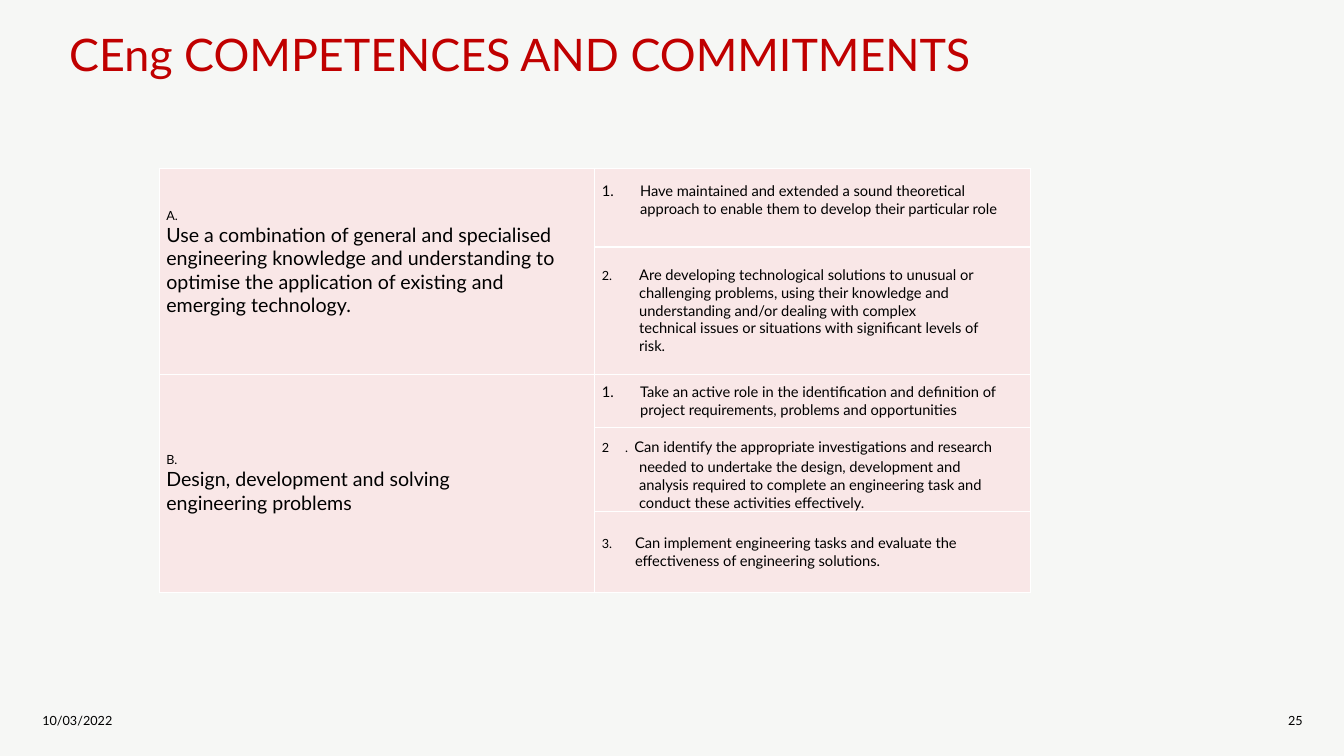
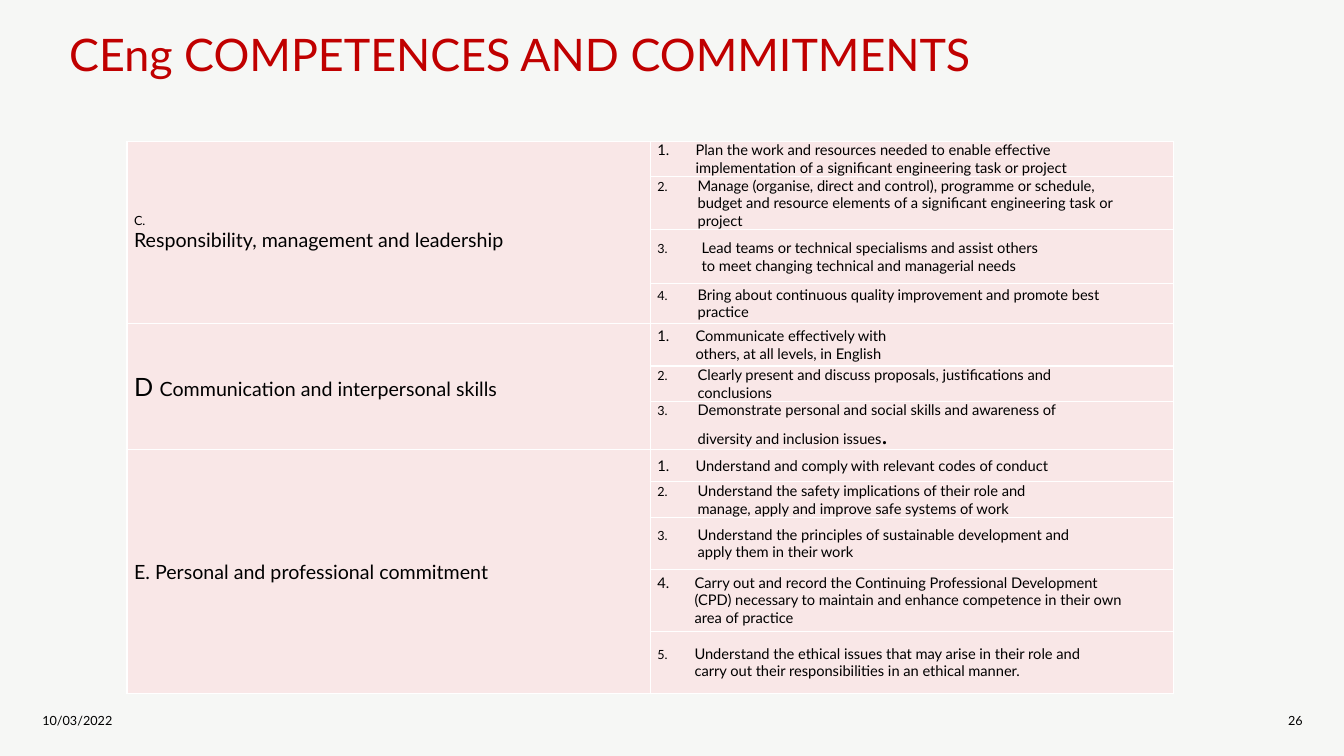
from copy import deepcopy
from dataclasses import dataclass

from lxml import etree
from pptx import Presentation
from pptx.dml.color import RGBColor
from pptx.enum.text import MSO_ANCHOR, MSO_AUTO_SIZE, PP_ALIGN
from pptx.oxml.ns import qn
from pptx.util import Inches, Pt

MIDDLE = MSO_ANCHOR.MIDDLE
NO_FIT = MSO_AUTO_SIZE.NONE
LEFT, CENTER, RIGHT = PP_ALIGN.LEFT, PP_ALIGN.CENTER, PP_ALIGN.RIGHT

PAPER = RGBColor(0xF6, 0xF7, 0xF5)
RED = RGBColor(0xC0, 0x00, 0x00)
PINK = RGBColor(0xF9, 0xE7, 0xE7)
BLACK = RGBColor(0x00, 0x00, 0x00)
WHITE = RGBColor(0xFF, 0xFF, 0xFF)

FONT = "Lato"
SMALL, BODY, HEAD, LARGE = 9, 10.5, 14, 18
TITLE = "CEng COMPETENCES AND COMMITMENTS"
DATE = "10/03/2022"


@dataclass(frozen=True)
class Item:
    """One numbered requirement, filling one table row."""
    height: float
    text: str
    indent: float = 0.4
    num_size: float = SMALL
    bottom: float = 0
    detached_dot: bool = False
    large_stop: bool = False


@dataclass(frozen=True)
class Competence:
    """A heading, as paragraphs of (text, size) runs, and its requirements."""
    heading: list[list[tuple[str, float]]]
    items: list[Item]
    bottom: float = 0


@dataclass(frozen=True)
class Page:
    number: int
    left: float
    top: float
    col_width: float
    competences: list[Competence]


PAGES = [
    Page(25, 1.58, 1.67, 4.32, [
        Competence(
            [[("A.", SMALL)],
             [("Use a combination of general and specialised engineering knowledge "
               "and understanding to optimise the application of existing and "
               "emerging technology.", HEAD)]],
            [Item(0.78, "Have maintained and extended a sound theoretical\n"
                  "approach to enable them to develop their particular role",
                  0.38, BODY, bottom=0.15),
             Item(1.23, "Are developing technological solutions to unusual or\n"
                  "challenging problems, using their knowledge and\n"
                  "understanding and/or dealing with complex\n"
                  "technical issues or situations with significant levels of\n"
                  "risk.", 0.37)],
            bottom=0.18),
        Competence(
            [[("B.", SMALL)],
             [("Design, development and solving\nengineering problems", HEAD)]],
            [Item(0.53, "Take an active role in the identification and definition of\n"
                  "project requirements, problems and opportunities", 0.38, BODY),
             Item(0.83, "Can identify the appropriate investigations and research\n"
                  "needed to undertake the design, development and\n"
                  "analysis required to complete an engineering task and\n"
                  "conduct these activities effectively.",
                  0.37, detached_dot=True),
             Item(0.8, "Can implement engineering tasks and evaluate the\n"
                  "effectiveness of engineering solutions.", 0.33)]),
    ]),
    Page(26, 1.26, 1.4, 5.19, [
        Competence(
            [[("C.", SMALL)], [("Responsibility, management and leadership", HEAD)]],
            [Item(0.35, "Plan the work and resources needed to enable effective\n"
                  "implementation of a significant engineering task or project",
                  0.38, BODY),
             Item(0.53, "Manage (organise, direct and control), programme or schedule,\n"
                  "budget and resource elements of a significant engineering task or\n"
                  "project"),
             Item(0.53, "Lead teams or technical specialisms and assist others\n"
                  "to meet changing technical and managerial needs", 0.44),
             Item(0.4, "Bring about continuous quality improvement and promote best\n"
                  "practice")]),
        Competence(
            [[("D ", LARGE), ("Communication and interpersonal skills", HEAD)]],
            [Item(0.42, "Communicate effectively with\n"
                  "others, at all levels, in English", 0.38, BODY),
             Item(0.35, "Clearly present and discuss proposals, justifications and\n"
                  "conclusions"),
             Item(0.48, "Demonstrate personal and social skills and awareness of\n"
                  "diversity and inclusion issues", large_stop=True)]),
        Competence(
            [[("E. Personal and professional commitment", HEAD)]],
            [Item(0.32, "Understand and comply with relevant codes of conduct",
                  0.38, BODY),
             Item(0.35, "Understand the safety implications of their role and\n"
                  "manage, apply and improve safe systems of work"),
             Item(0.52, "Understand the principles of sustainable development and\n"
                  "apply them in their work"),
             Item(0.61, "Carry out and record the Continuing Professional Development\n"
                  "(CPD) necessary to maintain and enhance competence in their own\n"
                  "area of practice", 0.37, BODY),
             Item(0.62, "Understand the ethical issues that may arise in their role and\n"
                  "carry out their responsibilities in an ethical manner.", 0.37)]),
    ]),
]


# Text
def write(p, text: str, size: float = BODY, color: RGBColor = BLACK,
          align: PP_ALIGN = LEFT) -> None:
    """Add text to a paragraph; each newline becomes a line break."""
    p.alignment = align
    for i, line in enumerate(text.split("\n")):
        if i:
            p.add_line_break()
            p._p[-1].append(deepcopy(r._r.rPr))
        r = p.add_run()
        r.text = line
        r.font.name, r.font.size = FONT, Pt(size)
        r.font.color.rgb = color


def set_number(p, number: int, indent: float, kind: str, percent: int) -> None:
    """Number a paragraph with a hanging indent."""
    pPr = p._p.get_or_add_pPr()
    pPr.set("marL", str(Inches(indent)))
    pPr.set("indent", str(-Inches(indent)))
    etree.SubElement(pPr, qn("a:buSzPct"), val=str(percent * 1000))
    etree.SubElement(pPr, qn("a:buFont"), typeface=FONT)
    etree.SubElement(pPr, qn("a:buAutoNum"), type=kind, startAt=str(number))


def clear_frame(tf) -> None:
    tf.margin_left = tf.margin_right = tf.margin_top = tf.margin_bottom = 0
    tf.vertical_anchor = MIDDLE
    tf.auto_size = NO_FIT
    tf.word_wrap = True


def add_label(s, left: float, text: str, align: PP_ALIGN) -> None:
    tf = s.shapes.add_textbox(Inches(left), Inches(6.94),
                              Inches(0.85), Inches(0.41)).text_frame
    clear_frame(tf)
    write(tf.paragraphs[0], text, SMALL, align=align)


# Table
def format_cell(cell, bottom: float = 0) -> None:
    cell.margin_left = cell.margin_right = Inches(0.07)
    cell.margin_top, cell.margin_bottom = 0, Inches(bottom)
    cell.vertical_anchor = MIDDLE
    tcPr = cell._tc.get_or_add_tcPr()
    for side in ("lnL", "lnR", "lnT", "lnB"):
        ln = etree.SubElement(tcPr, qn(f"a:{side}"), w=str(Pt(1)))
        fill = etree.SubElement(ln, qn("a:solidFill"))
        etree.SubElement(fill, qn("a:srgbClr"), val=str(WHITE))
    cell.fill.solid()
    cell.fill.fore_color.rgb = PINK


def fill_item(tf, item: Item, number: int) -> None:
    p, text = tf.paragraphs[0], item.text
    if item.detached_dot:
        # The number and its dot stand apart on the first line
        first, text = text.split("\n", 1)
        set_number(p, number, 0.23, "arabicPlain", 100)
        write(p, ".", SMALL)
        write(p, " ", LARGE)
        write(p, first)
        p = tf.add_paragraph()
        p._p.get_or_add_pPr().set("marL", str(Inches(item.indent)))
        p._p.get_or_add_pPr().set("indent", "0")
    else:
        set_number(p, number, item.indent, "arabicPeriod",
                   round(100 * item.num_size / BODY))
    write(p, text)
    if item.large_stop:
        write(p, ".", LARGE)


def add_competence_table(s, page: Page) -> None:
    items = [it for c in page.competences for it in c.items]
    table = s.shapes.add_table(
        len(items), 2, Inches(page.left), Inches(page.top),
        Inches(2 * page.col_width), Inches(sum(it.height for it in items))).table
    table.first_row = table.horz_banding = False
    for col in table.columns:
        col.width = Inches(page.col_width)

    row = 0
    for comp in page.competences:
        head = table.cell(row, 0)
        for number, item in enumerate(comp.items, 1):
            table.rows[row].height = Inches(item.height)
            format_cell(table.cell(row, 0), comp.bottom)
            format_cell(table.cell(row, 1), item.bottom)
            fill_item(table.cell(row, 1).text_frame, item, number)
            row += 1
        head.merge(table.cell(row - 1, 0))
        tf = head.text_frame
        for i, runs in enumerate(comp.heading):
            p = tf.add_paragraph() if i else tf.paragraphs[0]
            for text, size in runs:
                write(p, text, size)


# Slides
def add_page(prs, page: Page) -> None:
    s = prs.slides.add_slide(prs.slide_layouts[5])
    title = s.shapes.title
    title.left, title.top = Inches(0.42), Inches(0.27)
    title.width, title.height = Inches(9.48), Inches(0.53)
    clear_frame(title.text_frame)
    write(title.text_frame.paragraphs[0], TITLE, 32, RED, CENTER)
    add_competence_table(s, page)
    add_label(s, 0.42, DATE, LEFT)
    add_label(s, 12.07, str(page.number), RIGHT)


def main() -> None:
    prs = Presentation()
    prs.slide_width, prs.slide_height = Inches(13.33), Inches(7.5)
    background = prs.slide_master.background.fill
    background.solid()
    background.fore_color.rgb = PAPER
    for page in PAGES:
        add_page(prs, page)
    prs.save("out.pptx")


if __name__ == "__main__":
    main()
